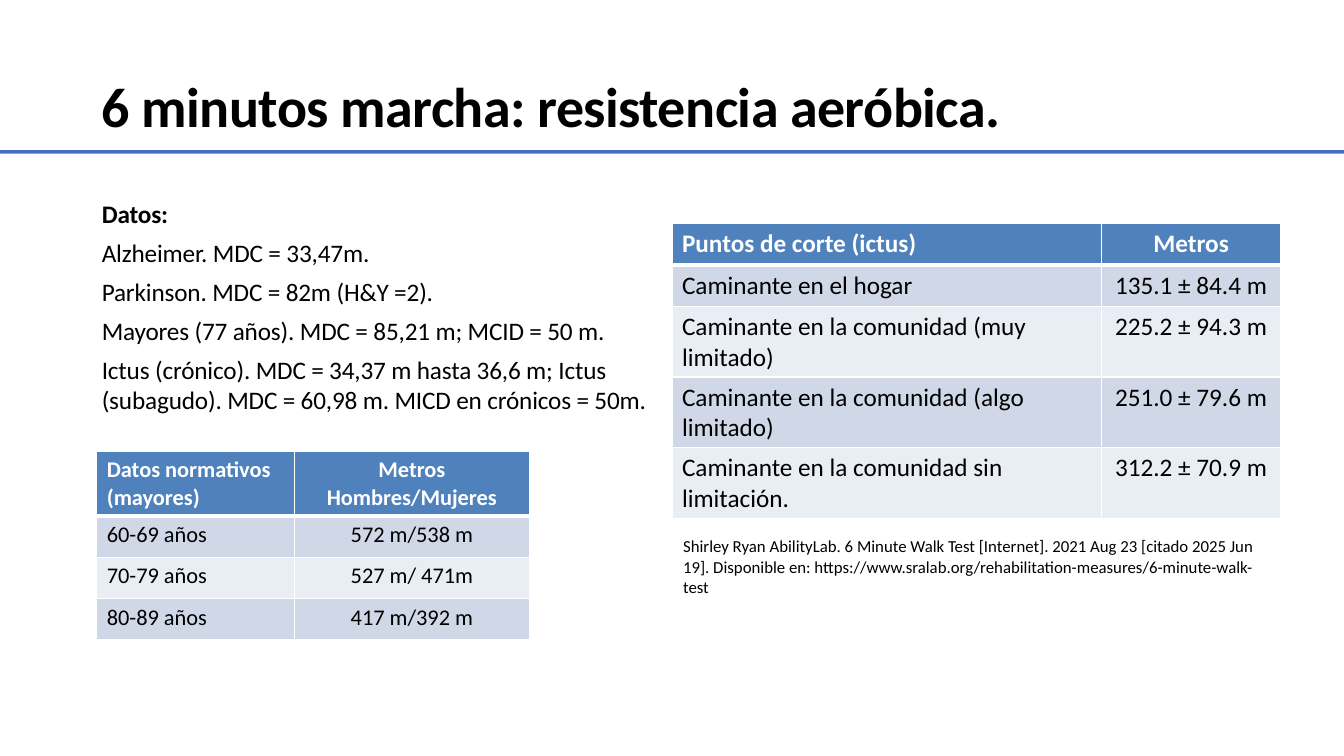
import pptx
import pptx.dml.color
import pptx.enum.shapes
import pptx.enum.text
import pptx.oxml
import pptx.oxml.ns
import pptx.util

COLS, ROWS = 40, 30
ALIGN = pptx.enum.text.PP_ALIGN


def tint(code):
    return pptx.dml.color.RGBColor.from_string(code)


class Page:
    """Slide on a grid of 40 columns by 30 rows, with its style."""

    font = "Calibri"
    ink, paper, rule = "000000", "FFFFFF", "4471C4"
    head, bands = "4F81BD", ("D0D8E8", "E9EDF4")

    def __init__(self, deck):
        self.slide = deck.slides.add_slide(deck.slide_layouts[6])
        self.wide = deck.slide_width / COLS
        self.high = deck.slide_height / ROWS

    def place(self, x, y, w, h):
        return [round(n) for n in (x * self.wide, y * self.high,
                                   w * self.wide, h * self.high)]

    def style(self, par, size, color, bold=False, space=0):
        """Format the runs of a paragraph; space is in hundredths of a point."""
        for run in par.runs:
            run.font.name = self.font
            run.font.size = pptx.util.Pt(size)
            run.font.bold = bold
            run.font.color.rgb = tint(color)
            if space:
                run.font._element.set("spc", str(space))

    def text(self, box, lines, size, inset=(0.01, 0), bold=0, space=0, gap=0):
        """Add a text box whose first `bold` paragraphs are bold."""
        frame = self.slide.shapes.add_textbox(*self.place(*box)).text_frame
        frame.word_wrap = True
        left, top = inset
        frame.margin_left = frame.margin_right = pptx.util.Inches(left)
        frame.margin_top = frame.margin_bottom = pptx.util.Inches(top)
        frame.text = "\n".join(lines)
        for i, par in enumerate(frame.paragraphs):
            par.space_before = pptx.util.Pt(gap if i else 0)
            self.style(par, size, self.ink, i < bold, space)

    def bar(self, box):
        shape = self.slide.shapes.add_shape(
            pptx.enum.shapes.MSO_SHAPE.RECTANGLE, *self.place(*box))
        shape.shadow.inherit = False
        shape.fill.solid()
        shape.fill.fore_color.rgb = tint(self.rule)
        shape.line.fill.background()

    def edge(self, cell, base):
        """Draw white borders, the lower one `base` points wide."""
        props = cell._tc.get_or_add_tcPr()
        space = pptx.oxml.ns.nsdecls("a")
        for side, width in zip("LRTB", (1, 1, 1, base)):
            props.append(pptx.oxml.parse_xml(
                f'<a:ln{side} {space} w="{pptx.util.Pt(width)}"><a:solidFill>'
                f'<a:srgbClr val="{self.paper}"/></a:solidFill></a:ln{side}>'))

    def table(self, x, y, widths, heights, data, size):
        box = self.place(x, y, sum(widths), sum(heights))
        grid = self.slide.shapes.add_table(len(data), len(widths), *box).table
        grid.first_row = grid.horz_banding = False
        for col, width in zip(grid.columns, widths):
            col.width = round(width * self.wide)
        for i, (row, height) in enumerate(zip(grid.rows, heights)):
            row.height = round(height * self.high)
            top = i == 0
            for j, cell in enumerate(row.cells):
                self.edge(cell, 3 if top else 1)
                cell.fill.solid()
                cell.fill.fore_color.rgb = tint(
                    self.head if top else self.bands[(i - 1) % 2])
                cell.text_frame.text = data[i][j]
                for par in cell.text_frame.paragraphs:
                    par.alignment = ALIGN.CENTER if j else ALIGN.LEFT
                    self.style(par, size, self.paper if top else self.ink, top)


NOTES = [
    "Datos:",
    "Alzheimer. MDC = 33,47m.",
    "Parkinson. MDC = 82m (H&Y =2).",
    "Mayores (77 años). MDC = 85,21 m; MCID = 50 m.",
    "Ictus (crónico). MDC = 34,37 m hasta 36,6 m; Ictus (subagudo). "
    "MDC = 60,98 m. MICD en crónicos = 50m.",
]
NORMS = [
    ("Datos normativos (mayores)", "Metros\nHombres/Mujeres"),
    ("60-69 años", "572 m/538 m"),
    ("70-79 años", "527 m/ 471m"),
    ("80-89 años", "417 m/392 m"),
]
CUTS = [
    ("Puntos de corte (ictus)", "Metros"),
    ("Caminante en el hogar", "135.1 ± 84.4 m"),
    ("Caminante en la comunidad (muy limitado)", "225.2 ± 94.3 m"),
    ("Caminante en la comunidad (algo limitado)", "251.0 ± 79.6 m"),
    ("Caminante en la comunidad sin limitación.", "312.2 ± 70.9 m"),
]
CITE = ("Shirley Ryan AbilityLab. 6 Minute Walk Test [Internet]. 2021 Aug 23 "
        "[citado 2025 Jun 19]. Disponible en:\u00a0"
        "https://www.sralab.org/rehabilitation-measures/6-minute-walk-test")


def main():
    deck = pptx.Presentation()
    deck.slide_width = pptx.util.Inches(13.33)
    deck.slide_height = pptx.util.Inches(7.5)
    page = Page(deck)
    page.text((3, 2.84, 30.72, 2.8),
              ["6 minutos marcha: resistencia aeróbica."],
              40, bold=1, space=-40)
    page.text((3, 7.52, 18.75, 8.96), NOTES, 18, (0.01, 0.09),
              bold=1, space=-10, gap=6.2)
    page.bar((0, 5.96, COLS, 0.14))
    line, pair = 1.64, 2.8
    page.table(2.88, 17.92, (5.88, 7), (2.56, line, line, line), NORMS, 16)
    page.table(20, 8.88, (12.78, 5.34), (line, line, pair, pair, pair),
               CUTS, 18)
    page.text((20, 21.08, 18.2, 2.84), [CITE], 12, (0.11, 0.05))
    deck.save("out.pptx")


if __name__ == "__main__":
    main()
